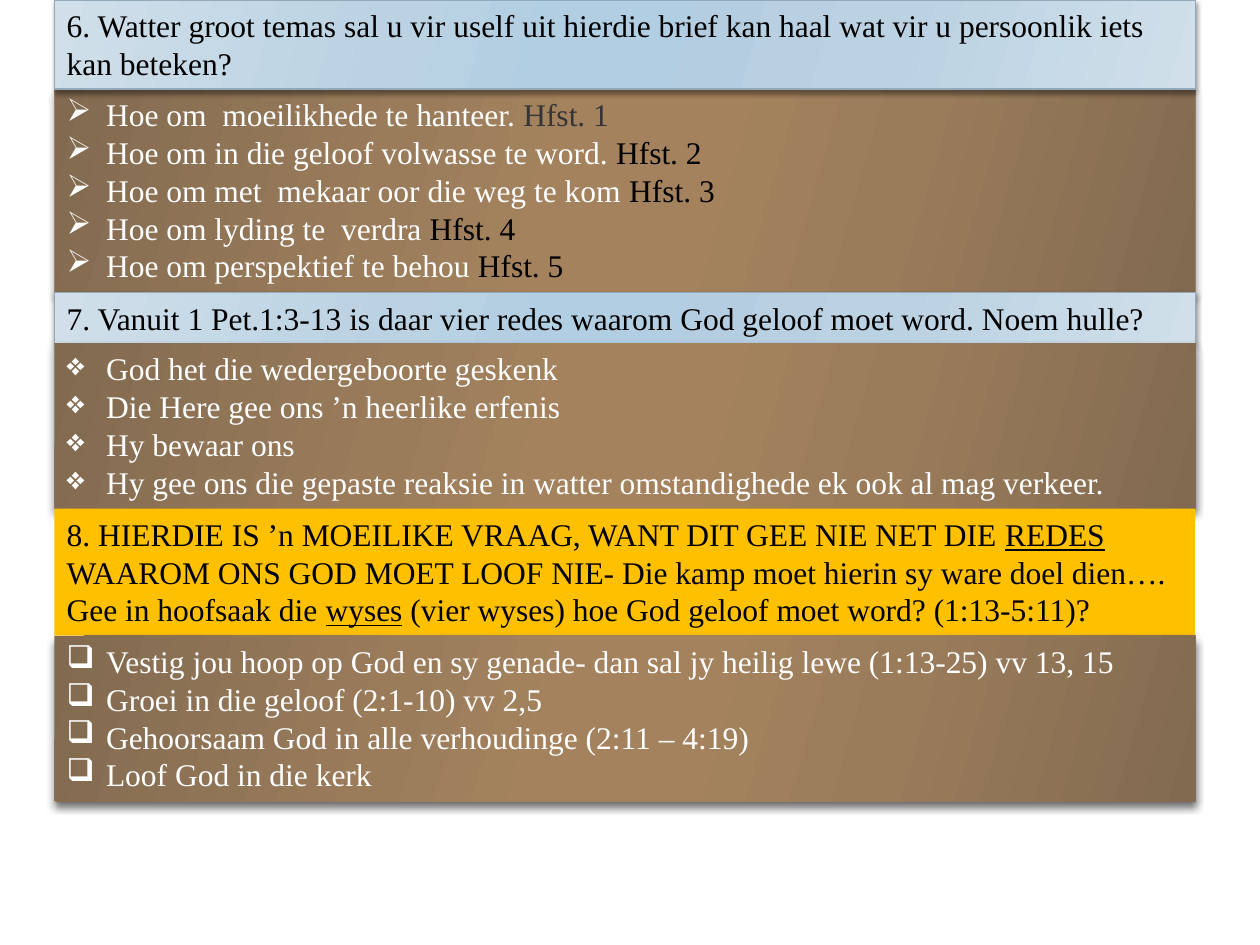
from lxml.etree import SubElement
from pptx import Presentation
from pptx.dml.color import RGBColor
from pptx.enum.shapes import MSO_SHAPE
from pptx.enum.text import MSO_ANCHOR, MSO_AUTO_SIZE as AUTO, PP_ALIGN
from pptx.oxml import parse_xml
from pptx.oxml.ns import nsdecls, qn
from pptx.util import Pt

BLACK, WHITE, GOLD = "000000", "FFFFFF", "FFC000"
STOPS = (0, 30, 45, 55, 73, 100)
BROWN = ("826A50", "9A7C5B", "A4825D", "A4825D", "9A7C5B", "826A50")
BLUE = ("D0DFEA", "BBD2E3", "B2CEE2", "B4CDE0", "BBD2E3", "D0DFEA")
BLUE_SHADOW = (40, 3, 2)
BROWN_SHADOW = (57, 4.5, 3)
LEFT, WIDTH = 31, 652
LINE_HEIGHT, PADDING = 21.82, 7.2
INDENT = 22.5


def rgb(value):
    return RGBColor.from_string(value)


def add_gradient(sp, colors):
    stops = "".join(
        f'<a:gs pos="{pos * 1000}"><a:srgbClr val="{color}"/></a:gs>'
        for pos, color in zip(STOPS, colors))
    sp._element.spPr.find(qn("a:prstGeom")).addnext(parse_xml(
        f'<a:gradFill {nsdecls("a")} rotWithShape="1"><a:gsLst>{stops}</a:gsLst>'
        f'<a:lin ang="{16 * 60000}" scaled="0"/></a:gradFill>'))


def add_shadow(sp, alpha, blur, dist):
    """Cast a black shadow straight down; alpha in percent, lengths in points."""
    effects = sp._element.spPr.find(qn("a:effectLst"))
    shadow = SubElement(effects, qn("a:outerShdw"), blurRad=str(Pt(blur)),
                        dist=str(Pt(dist)), dir=str(90 * 60000), rotWithShape="0")
    color = SubElement(shadow, qn("a:srgbClr"), val=BLACK)
    SubElement(color, qn("a:alpha"), val=str(alpha * 1000))


def add_text(p, text, color=BLACK, underline=None):
    r = p.add_run()
    r.text = text
    r.font.name, r.font.size = "Times New Roman", Pt(18)
    r.font.color.rgb = rgb(color)
    r.font.underline = underline


def set_bullet(p, char):
    pPr = p._p.get_or_add_pPr()
    pPr.set("marL", str(Pt(INDENT)))
    pPr.set("indent", str(-Pt(INDENT)))
    SubElement(pPr, qn("a:buChar"), char=char)


def add_band(slide, top, height, paragraphs, fill, line=None, shadow=None, bullet=None):
    """Full-width box; each paragraph is a list of (text, format) runs."""
    sp = slide.shapes.add_shape(MSO_SHAPE.RECTANGLE, Pt(LEFT), Pt(top), Pt(WIDTH), Pt(height))
    sp.shadow.inherit = False
    if isinstance(fill, str):
        sp.fill.solid()
        sp.fill.fore_color.rgb = rgb(fill)
    else:
        add_gradient(sp, fill)
    if line:
        sp.line.color.rgb = rgb(line)
        sp.line.width = Pt(0.75)
    else:
        sp.line.fill.background()
    if shadow:
        add_shadow(sp, *shadow)

    tf = sp.text_frame
    tf.word_wrap, tf.auto_size = True, AUTO.SHAPE_TO_FIT_TEXT
    tf.vertical_anchor = MSO_ANCHOR.TOP
    for i, runs in enumerate(paragraphs):
        p = tf.paragraphs[0] if i == 0 else tf.add_paragraph()
        p.alignment = PP_ALIGN.LEFT
        if bullet:
            set_bullet(p, bullet)
        for text, style in runs:
            add_text(p, text, **style)


def add_question(slide, top, height, text):
    add_band(slide, top, height, [[(text, {})]], BLUE, line="92A9B9", shadow=BLUE_SHADOW)


def add_answers(slide, top, height, answers, bullet, line=None, shadow=BROWN_SHADOW):
    """Each answer is a tuple: text, then optionally a reference and its colour."""
    paragraphs = [[(text, {"color": WHITE})] + [(ref, {"color": c}) for ref, c in refs]
                  for text, *refs in answers]
    add_band(slide, top, height, paragraphs, BROWN, line, shadow, bullet)


THEMES = [
    ("Hoe om  moeilikhede te hanteer. ", ("Hfst. 1", "353537")),
    ("Hoe om in die geloof volwasse te word. ", ("Hfst. 2", BLACK)),
    ("Hoe om met  mekaar oor die weg te kom ", ("Hfst. 3", BLACK)),
    ("Hoe om lyding te  verdra ", ("Hfst. 4", BLACK)),
    ("Hoe om perspektief te behou ", ("Hfst. 5", BLACK)),
]
REASONS = [
    ("God het die wedergeboorte geskenk",),
    ("Die Here gee ons ’n heerlike erfenis",),
    ("Hy bewaar ons",),
    ("Hy gee ons die gepaste reaksie in watter omstandighede ek ook al mag verkeer.",),
]
WAYS = [
    ("Vestig jou hoop op God en sy genade- dan sal jy heilig lewe (1:13-25) vv 13, 15",),
    ("Groei in die geloof (2:1-10) vv 2,5",),
    ("Gehoorsaam God in alle verhoudinge (2:11 – 4:19)",),
    ("Loof God in die kerk",),
]
UNDERLINED = {"underline": True}
HARD_QUESTION = [
    [("8. HIERDIE IS ’n MOEILIKE VRAAG, WANT DIT GEE NIE NET DIE ", {}),
     ("REDES", UNDERLINED),
     (" WAAROM ONS GOD MOET LOOF NIE- Die kamp moet hierin sy ware doel dien….", {})],
    [("Gee in hoofsaak die ", {}), ("wyses", UNDERLINED),
     (" (vier wyses) hoe God geloof moet word? (1:13-5:11)?", {})],
]


def stack(line_counts):
    """Return (top, height) for boxes that follow each other without a gap."""
    boxes, top = [], 0
    for count in line_counts:
        height = PADDING + count * LINE_HEIGHT
        boxes.append((top, height))
        top += height
    return boxes


def main():
    prs = Presentation()
    prs.slide_width, prs.slide_height = Pt(720), Pt(540)
    s = prs.slides.add_slide(prs.slide_layouts[6])
    q6, a6, q7, a7, q8, a8 = stack((2, len(THEMES), 1, len(REASONS), 3, len(WAYS)))

    # The first answers lie under the shadow of their question.
    add_answers(s, *a6, THEMES, "➢", line="9C8265", shadow=(40, 4, 3.3))
    add_question(s, *q6, "6. Watter groot temas sal u vir uself uit hierdie brief kan haal "
                         "wat vir u persoonlik iets kan beteken?")
    add_question(s, *q7, "7. Vanuit 1 Pet.1:3-13 is daar vier redes waarom God geloof "
                         "moet word. Noem hulle?")
    add_answers(s, *a7, REASONS, "❖")
    add_band(s, *q8, HARD_QUESTION, GOLD)
    add_answers(s, *a8, WAYS, "❑")
    prs.save("out.pptx")


if __name__ == "__main__":
    main()
